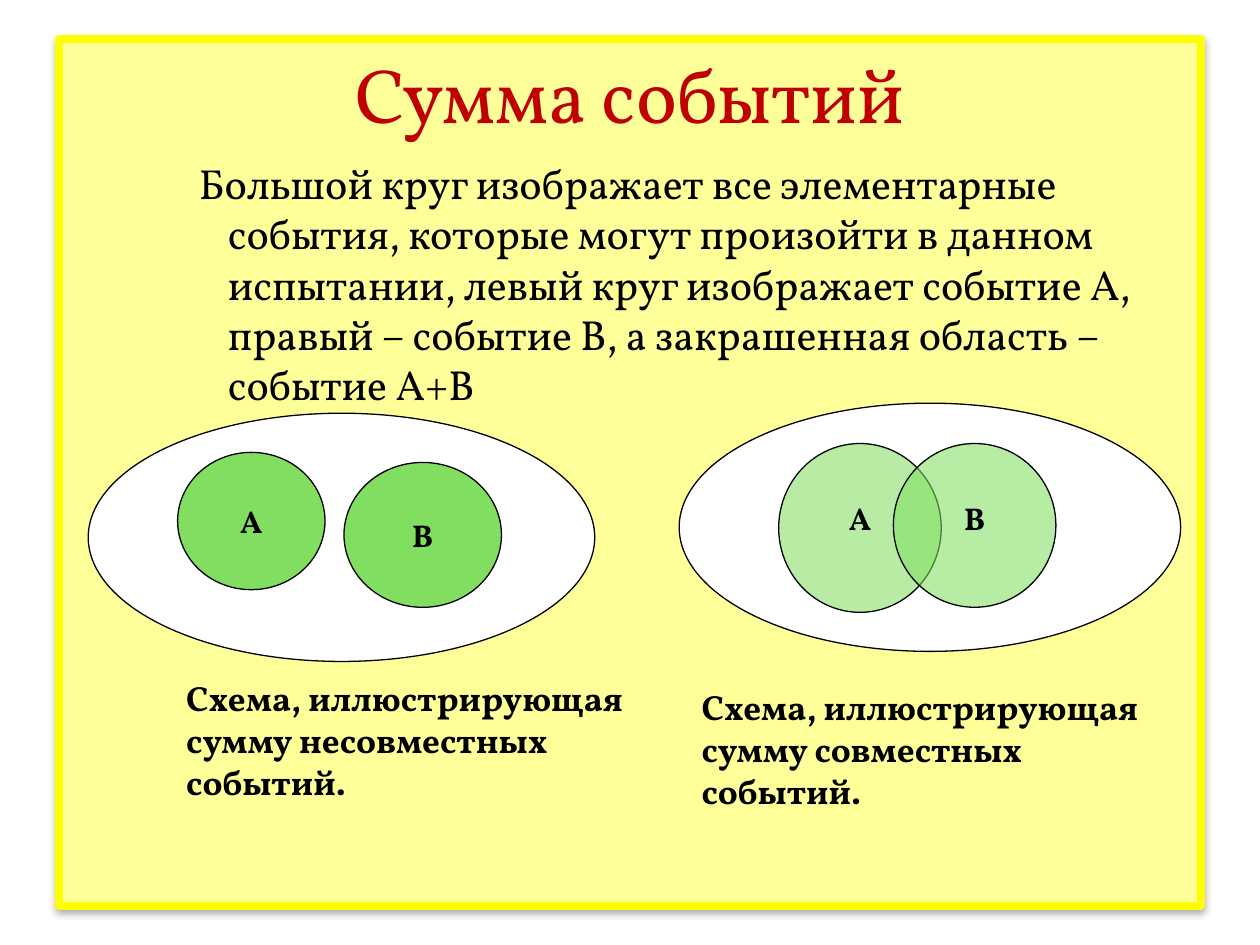
from lxml import etree
from pptx import Presentation
from pptx.dml.color import RGBColor
from pptx.enum import shapes, text
from pptx.oxml.ns import qn
from pptx.util import Inches, Pt

FONT = "Vollkorn"
BLACK, WHITE, GREEN = "000000", "FFFFFF", "81DE60"
PALE_YELLOW, YELLOW, RED = "FFFF99", "FFFF00", "C00000"


def color(hex_code):
    return RGBColor.from_string(hex_code)


def set_font(paragraph, size, hex_code=BLACK, bold=False):
    font = paragraph.font
    font.name, font.size, font.bold = FONT, Pt(size), bold
    font.color.rgb = color(hex_code)


def add_figure(slide, kind, box, fill, line=BLACK, width=0.75):
    figure = slide.shapes.add_shape(kind, *map(Inches, box))
    figure.shadow.inherit = False
    figure.fill.solid()
    figure.fill.fore_color.rgb = color(fill)
    figure.line.color.rgb = color(line)
    figure.line.width = Pt(width)
    return figure


def add_ellipse(slide, box, fill):
    return add_figure(slide, shapes.MSO_SHAPE.OVAL, box, fill)


def add_frame(slide):
    frame = add_figure(slide, shapes.MSO_SHAPE.RECTANGLE,
                       (0.47, 0.31, 9.06, 6.88), PALE_YELLOW, YELLOW, 4.5)
    effects = frame._element.spPr.find(qn("a:effectLst"))
    shadow = etree.SubElement(effects, qn("a:outerShdw"), blurRad=str(Pt(3.5)),
                              dist=str(Pt(2.2)), dir="5400000", rotWithShape="0")
    tint = etree.SubElement(shadow, qn("a:srgbClr"), val=BLACK)
    etree.SubElement(tint, qn("a:alpha"), val="32000")


def add_event(slide, name, box, opacity=100, lift=0):
    """Draw an event circle; lift raises its label above the centre."""
    event = add_ellipse(slide, box, GREEN)
    if opacity < 100:
        tint = event._element.spPr.find(qn("a:solidFill"))[0]
        etree.SubElement(tint, qn("a:alpha"), val=str(opacity * 1000))
    label = event.text_frame
    label.vertical_anchor = text.MSO_ANCHOR.MIDDLE
    label.margin_bottom = Inches(0.05 + 2 * lift)
    paragraph = label.paragraphs[0]
    paragraph.text = name
    paragraph.alignment = text.PP_ALIGN.CENTER
    set_font(paragraph, 18, bold=True)


def add_text(slide, words, box, size, hex_code=BLACK, bold=False):
    frame = slide.shapes.add_textbox(*map(Inches, box)).text_frame
    frame.word_wrap = True
    paragraph = frame.paragraphs[0]
    paragraph.text = words
    set_font(paragraph, size, hex_code, bold)
    return frame


def main():
    prs = Presentation()
    prs.slide_width, prs.slide_height = Inches(10), Inches(7.5)
    slide = prs.slides.add_slide(prs.slide_layouts[6])
    add_frame(slide)

    # Sample spaces
    for space in ((5.39, 3.2, 3.98, 1.97), (0.7, 3.28, 4.02, 1.97)):
        add_ellipse(slide, space, WHITE)

    # Title
    title = add_text(slide, "Сумма событий", (0.5, 0.3, 9, 0.87), 44, RED)
    title.vertical_anchor = text.MSO_ANCHOR.MIDDLE
    title.paragraphs[0].alignment = text.PP_ALIGN.CENTER

    # Explanation with a hanging indent
    explanation = add_text(
        slide,
        "Большой круг изображает все элементарные события, которые могут "
        "произойти в данном испытании, левый круг изображает событие А, "
        "правый – событие В, а закрашенная область – событие А+В",
        (1.48, 1.2, 7.81, 2.1), 24)
    properties = explanation.paragraphs[0]._p.get_or_add_pPr()
    properties.set("marL", str(Inches(0.23)))
    properties.set("indent", str(Inches(-0.23)))

    # Disjoint events, then overlapping events
    add_event(slide, "А", (1.41, 3.59, 1.17, 1.09))
    add_event(slide, "В", (2.73, 3.67, 1.25, 1.15))
    add_event(slide, "А", (6.18, 3.52, 1.29, 1.34), 56, 0.08)
    add_event(slide, "В", (7.09, 3.52, 1.29, 1.3), 57, 0.06)

    # Captions
    for kind, left, top in (("несовместных", 1.38, 5.32),
                            ("совместных", 5.47, 5.39)):
        add_text(slide, f"Схема, иллюстрирующая сумму {kind} событий.",
                 (left, top, 3.86, 1.1), 20, bold=True)

    prs.save("out.pptx")


if __name__ == "__main__":
    main()
